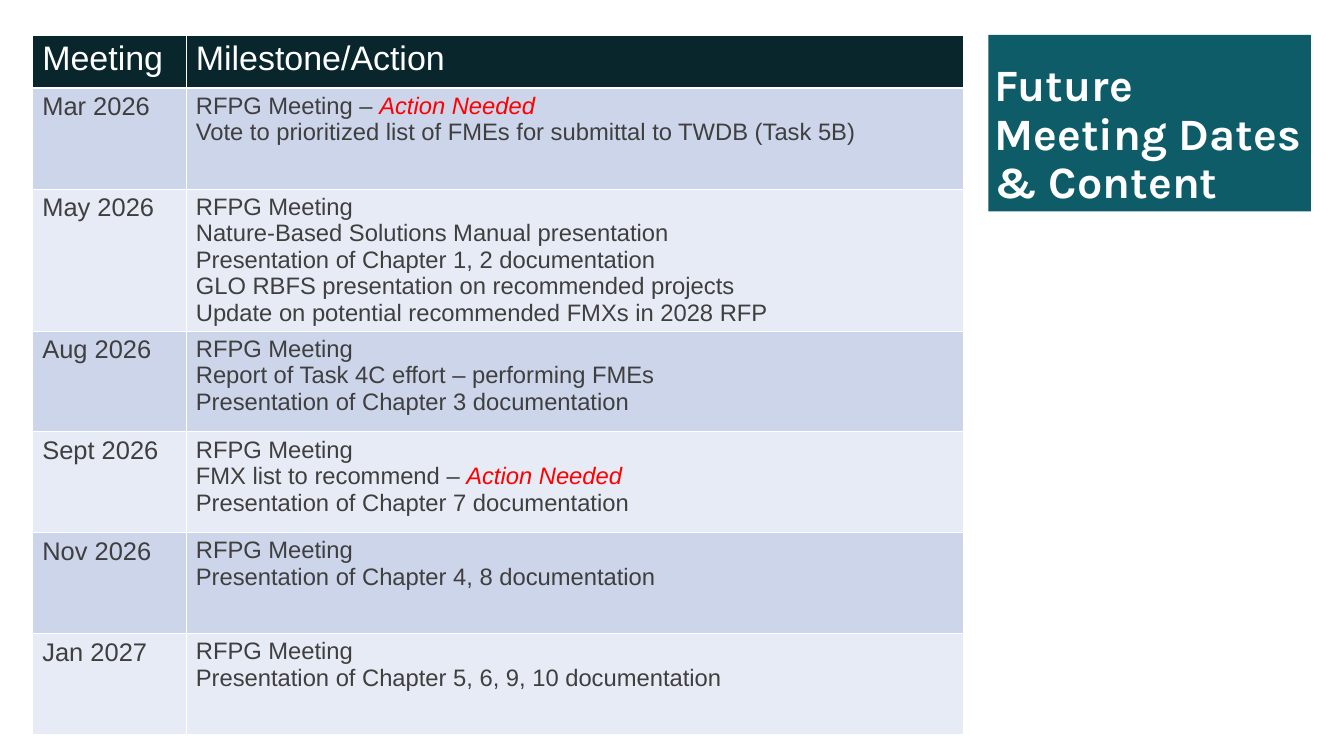
from lxml.etree import SubElement
from pptx import Presentation
from pptx.dml.color import RGBColor
from pptx.enum.shapes import MSO_SHAPE
from pptx.enum.text import MSO_ANCHOR, PP_ALIGN
from pptx.oxml.ns import qn
from pptx.util import Cm, Pt

ACTION = "Action Needed"
MEETINGS = [
    ("Mar 2026", [f"RFPG Meeting – {ACTION}",
                  "Vote to prioritized list of FMEs for submittal to TWDB (Task 5B)"]),
    ("May 2026", ["RFPG Meeting",
                  "Nature-Based Solutions Manual presentation",
                  "Presentation of Chapter 1, 2 documentation",
                  "GLO RBFS presentation on recommended projects",
                  "Update on potential recommended FMXs in 2028 RFP"]),
    ("Aug 2026", ["RFPG Meeting",
                  "Report of Task 4C effort – performing FMEs",
                  "Presentation of Chapter 3 documentation"]),
    ("Sept 2026", ["RFPG Meeting",
                   f"FMX list to recommend – {ACTION}",
                   "Presentation of Chapter 7 documentation"]),
    ("Nov 2026", ["RFPG Meeting", "Presentation of Chapter 4, 8 documentation"]),
    ("Jan 2027", ["RFPG Meeting", "Presentation of Chapter 5, 6, 9, 10 documentation"]),
]


def color(value):
    return RGBColor.from_string(value)


def add_text(paragraph, text, *, size, color_hex, font="Arial", bold=False, italic=False):
    run = paragraph.add_run()
    run.text = text
    run.font.name = font
    run.font.size = Pt(size)
    run.font.bold = bold
    run.font.italic = italic
    run.font.color.rgb = color(color_hex)


def set_borders(cell, bottom_width):
    """Draw white borders; call before the fill, which must follow them in the XML."""
    properties = cell._tc.get_or_add_tcPr()
    for side, width in (("L", 1), ("R", 1), ("T", 1), ("B", bottom_width)):
        line = SubElement(properties, qn(f"a:ln{side}"), w=str(Pt(width)))
        fill = SubElement(line, qn("a:solidFill"))
        SubElement(fill, qn("a:srgbClr"), val=SlideBuilder.WHITE)


class SlideBuilder:
    WHITE = "FFFFFF"
    TEAL = "0E5C68"
    HEADER = "09262C"
    BANDS = ("CCD5EA", "E7EBF5")
    BODY = "3F3F3F"
    ALERT = "FF0000"

    def __init__(self, presentation):
        self.slide = presentation.slides.add_slide(presentation.slide_layouts[6])

    def add_title(self, text, left, top, width, height):
        shape = self.slide.shapes.add_shape(
            MSO_SHAPE.RECTANGLE, Cm(left), Cm(top), Cm(width), Cm(height))
        shape.shadow.inherit = False
        shape.fill.solid()
        shape.fill.fore_color.rgb = color(self.TEAL)
        shape.line.fill.background()
        frame = shape.text_frame
        frame.word_wrap = True
        frame.vertical_anchor = MSO_ANCHOR.BOTTOM
        paragraph = frame.paragraphs[0]
        paragraph.alignment = PP_ALIGN.LEFT
        paragraph.line_spacing = 0.9
        add_text(paragraph, text, size=52.8, color_hex=self.WHITE, font="Karla", bold=True)

    def fill_cell(self, cell, lines, fill, size, color_hex, bottom_width=1):
        """Style a cell and write one paragraph per line, stressing needed actions."""
        set_borders(cell, bottom_width)
        cell.fill.solid()
        cell.fill.fore_color.rgb = color(fill)
        cell.margin_left = cell.margin_right = Cm(0.41)
        cell.margin_top = cell.margin_bottom = Cm(0.2)
        frame = cell.text_frame
        for index, line in enumerate(lines):
            paragraph = frame.add_paragraph() if index else frame.paragraphs[0]
            plain, action, _ = line.partition(ACTION)
            add_text(paragraph, plain, size=size, color_hex=color_hex)
            if action:
                add_text(paragraph, action, size=size, color_hex=self.ALERT, italic=True)

    def add_schedule(self, headings, meetings, left, top, column_widths, header_height, row_height):
        height = header_height + row_height * len(meetings)
        table = self.slide.shapes.add_table(
            len(meetings) + 1, len(headings),
            Cm(left), Cm(top), Cm(sum(column_widths)), Cm(height)).table
        for column, width in zip(table.columns, column_widths):
            column.width = Cm(width)
        for row in table.rows:
            row.height = Cm(row_height)
        table.rows[0].height = Cm(header_height)

        for index, heading in enumerate(headings):
            self.fill_cell(table.cell(0, index), [heading], self.HEADER, 40, self.WHITE,
                           bottom_width=3)
        for index, (date, actions) in enumerate(meetings):
            band = self.BANDS[index % 2]
            self.fill_cell(table.cell(index + 1, 0), [date], band, 30, self.BODY)
            self.fill_cell(table.cell(index + 1, 1), actions, band, 28, self.BODY)


def main():
    presentation = Presentation()
    presentation.slide_width = Cm(55.85)
    presentation.slide_height = Cm(31.42)
    builder = SlideBuilder(presentation)
    builder.add_title("Future Meeting Dates & Content", 41.07, 1.45, 13.41, 7.34)
    builder.add_schedule(("Meeting", "Milestone/Action"), MEETINGS, 1.35, 1.45,
                         column_widths=(6.38, 32.31), header_height=2.21, row_height=4.19)
    presentation.save("out.pptx")


if __name__ == "__main__":
    main()
